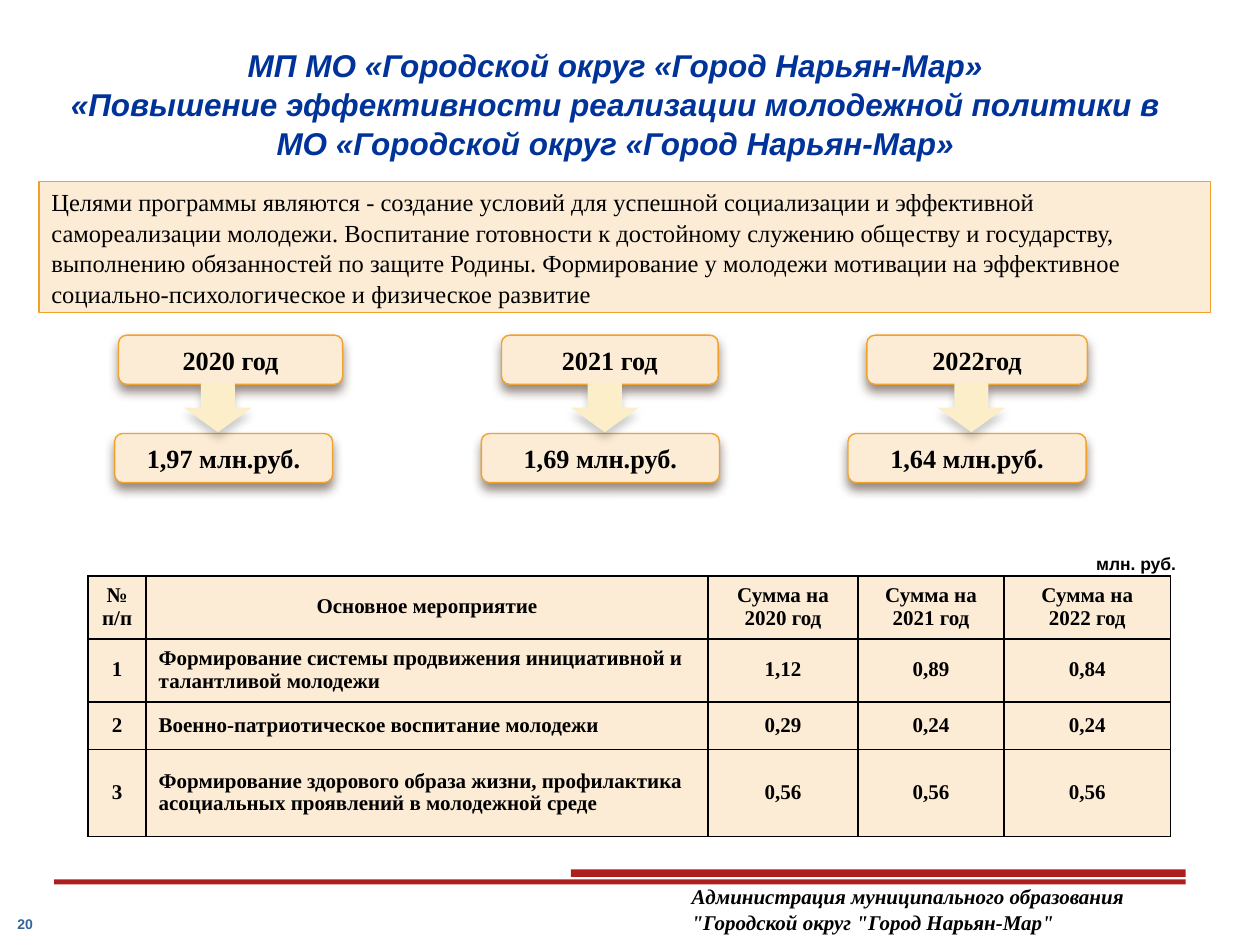
"""Build the youth policy programme budget slide."""
from dataclasses import dataclass

from lxml import etree
from pptx import Presentation
from pptx.dml.color import RGBColor
from pptx.enum import shapes, text
from pptx.oxml import ns
from pptx.util import Inches, Pt

HUES = {"red": "AD1F1F", "blue": "003399", "steel": "336699", "black": "000000",
        "cream": "FCECD5", "sand": "FBEEC9", "gold": "F0A22E", "brown": "4E3B30"}
SERIF, SANS = "Times New Roman", "Arial"
KIND, ALIGN = shapes.MSO_SHAPE, text.PP_ALIGN
MIDDLE = text.MSO_ANCHOR.MIDDLE


@dataclass
class Style:
    size: float
    name: str = SERIF
    hue: str = "black"
    bold: bool = True
    italic: bool = False
    align: int = ALIGN.CENTER
    lead: float = 1.0


@dataclass
class Year:
    name: str
    total: str
    head: tuple
    foot: tuple
    arrow: float


TITLE = Style(18, SANS, "blue", italic=True, lead=1.03)
GOAL = Style(14, bold=False, align=ALIGN.LEFT, lead=1.05)
CARD = Style(15)
CELL = Style(12, lead=0.95)
TASK = Style(12, align=ALIGN.LEFT, lead=0.95)
UNIT = Style(10, SANS, align=ALIGN.LEFT)
PAGE = Style(8, SANS, "steel", align=ALIGN.LEFT)
OWNER = Style(12, italic=True, align=ALIGN.LEFT, lead=1.03)

YEARS = [Year("2020 год", "1,97 млн.руб.", (0.94, 1.78), (0.91, 1.73), 1.46),
         Year("2021 год", "1,69 млн.руб.", (3.98, 1.72), (3.82, 1.89), 4.53),
         Year("2022год", "1,64 млн.руб.", (6.88, 1.75), (6.73, 1.89), 7.44)]
HEADING = """МП МО «Городской округ «Город Нарьян-Мар»
«Повышение эффективности реализации молодежной политики в
МО «Городской округ «Город Нарьян-Мар»"""
AIMS = ("Целями программы являются - создание условий для успешной социализации и эффективной "
        "самореализации молодежи. Воспитание готовности к достойному служению обществу и "
        "государству, выполнению обязанностей по защите Родины. Формирование у молодежи "
        "мотивации на эффективное социально-психологическое и физическое развитие")
COLS, ROWS = [0.46, 4.46, 1.19, 1.16, 1.32], [0.5, 0.5, 0.38, 0.69]
CELLS = [
    ["№ п/п", "Основное мероприятие", "Сумма на 2020 год", "Сумма на 2021 год",
     "Сумма на\n2022 год"],
    ["1", "Формирование системы продвижения инициативной и талантливой молодежи",
     "1,12", "0,89", "0,84"],
    ["2", "Военно-патриотическое воспитание молодежи", "0,29", "0,24", "0,24"],
    ["3", "Формирование здорового образа жизни, профилактика асоциальных проявлений "
     "в молодежной среде", "0,56", "0,56", "0,56"]]


def rgb(hue: str) -> RGBColor:
    """Return a named colour."""
    return RGBColor.from_string(HUES[hue])


def write(frame, words: str, style: Style) -> None:
    """Fill a text frame with styled paragraphs."""
    frame.word_wrap = True
    frame.text = words
    for para in frame.paragraphs:
        para.alignment, para.line_spacing = style.align, style.lead
        for key in ("size", "name", "bold", "italic"):
            value = getattr(style, key)
            setattr(para.font, key, Pt(value) if key == "size" else value)
        para.font.color.rgb = rgb(style.hue)


def label(slide, at: tuple, words: str, style: Style, inset: tuple = (0.1, 0.05)) -> None:
    """Add a text box."""
    frame = slide.shapes.add_textbox(*map(Inches, at)).text_frame
    write(frame, words, style)
    pad(frame, *inset)


def pad(frame, side: float, edge: float) -> None:
    """Set the side and edge margins."""
    for key, gap in {"left": side, "right": side, "top": edge, "bottom": edge}.items():
        setattr(frame, f"margin_{key}", Inches(gap))


def block(slide, kind: int, at: tuple, fill: str, line: float = 0):
    """Add a filled shape with an optional gold outline."""
    shape = slide.shapes.add_shape(kind, *map(Inches, at))
    shape.shadow.inherit = False
    shape.fill.solid()
    shape.fill.fore_color.rgb = rgb(fill)
    if line:
        shape.line.color.rgb, shape.line.width = rgb("gold"), Pt(line)
    else:
        shape.line.fill.background()
    return shape


def shade(shape, hue: str, alpha: int, blur: float, dist: float) -> None:
    """Cast a shadow downwards."""
    node = shape._element.spPr.find(ns.qn("a:effectLst"))
    cast = etree.SubElement(node, ns.qn("a:outerShdw"), blurRad=str(Pt(blur)),
                            dist=str(Pt(dist)), dir="5400000", rotWithShape="0")
    tint = etree.SubElement(cast, ns.qn("a:srgbClr"), val=HUES[hue])
    etree.SubElement(tint, ns.qn("a:alpha"), val=str(alpha * 1000))


def card(slide, span: tuple, top: float, words: str) -> None:
    """Add a rounded caption card."""
    left, width = span
    shape = block(slide, KIND.ROUNDED_RECTANGLE, (left, top, width, 0.39), "cream", 0.79)
    shade(shape, "brown", 60, 6, 4)
    write(shape.text_frame, words, CARD)
    shape.text_frame.vertical_anchor = MIDDLE


def border(cell) -> None:
    """Outline a table cell."""
    props = cell._tc.get_or_add_tcPr()
    for spot, side in enumerate(("lnL", "lnR", "lnT", "lnB")):
        line = etree.Element(ns.qn(f"a:{side}"), w=str(Pt(1)))
        fill = etree.SubElement(line, ns.qn("a:solidFill"))
        etree.SubElement(fill, ns.qn("a:srgbClr"), val=HUES["black"])
        props.insert(spot, line)


def grid(slide) -> None:
    """Add the table of activities."""
    at = (0.7, 4.57, sum(COLS), sum(ROWS))
    table = slide.shapes.add_table(len(ROWS), len(COLS), *map(Inches, at)).table
    table.first_row = table.horz_banding = False
    for col, width in zip(table.columns, COLS):
        col.width = Inches(width)
    for r, (row, height) in enumerate(zip(table.rows, ROWS)):
        row.height = Inches(height)
        for c, cell in enumerate(row.cells):
            write(cell.text_frame, CELLS[r][c], TASK if r and c == 1 else CELL)
            cell.vertical_anchor = MIDDLE
            if r and c > 1:
                pad(cell, 0.01, 0.01)
            cell.fill.solid()
            cell.fill.fore_color.rgb = rgb("cream")
            border(cell)


def main() -> None:
    """Build and save the slide."""
    deck = Presentation()
    deck.slide_width, deck.slide_height = Inches(10), Inches(7.5)
    slide = deck.slides.add_slide(deck.slide_layouts[6])
    for at in ((4.53, 6.9, 4.88, 0.06), (0.43, 6.98, 8.98, 0.04)):
        block(slide, KIND.RECTANGLE, at, "red")
    label(slide, (0, 0.31, 9.77, 1.31), HEADING, TITLE)
    label(slide, (0.04, 7.22, 0.43, 0.24), "20", PAGE)
    for year in YEARS:
        card(slide, year.head, 2.66, year.name)
        card(slide, year.foot, 3.44, year.total)
        arrow = block(slide, KIND.DOWN_ARROW, (year.arrow, 3.04, 0.54, 0.39), "sand")
        shade(arrow, "black", 20, 5, 4)
    goal = block(slide, KIND.RECTANGLE, (0.31, 1.44, 9.3, 1.04), "cream", 0.75)
    write(goal.text_frame, AIMS, GOAL)
    goal.text_frame.vertical_anchor = MIDDLE
    grid(slide)
    label(slide, (8.7, 4.38, 1.07, 0.19), "млн. руб.", UNIT, (0, 0.01))
    label(slide, (5.39, 6.96, 3.86, 0.5),
          'Администрация муниципального образования "Городской округ "Город Нарьян-Мар"', OWNER)
    deck.save("out.pptx")


if __name__ == "__main__":
    main()
